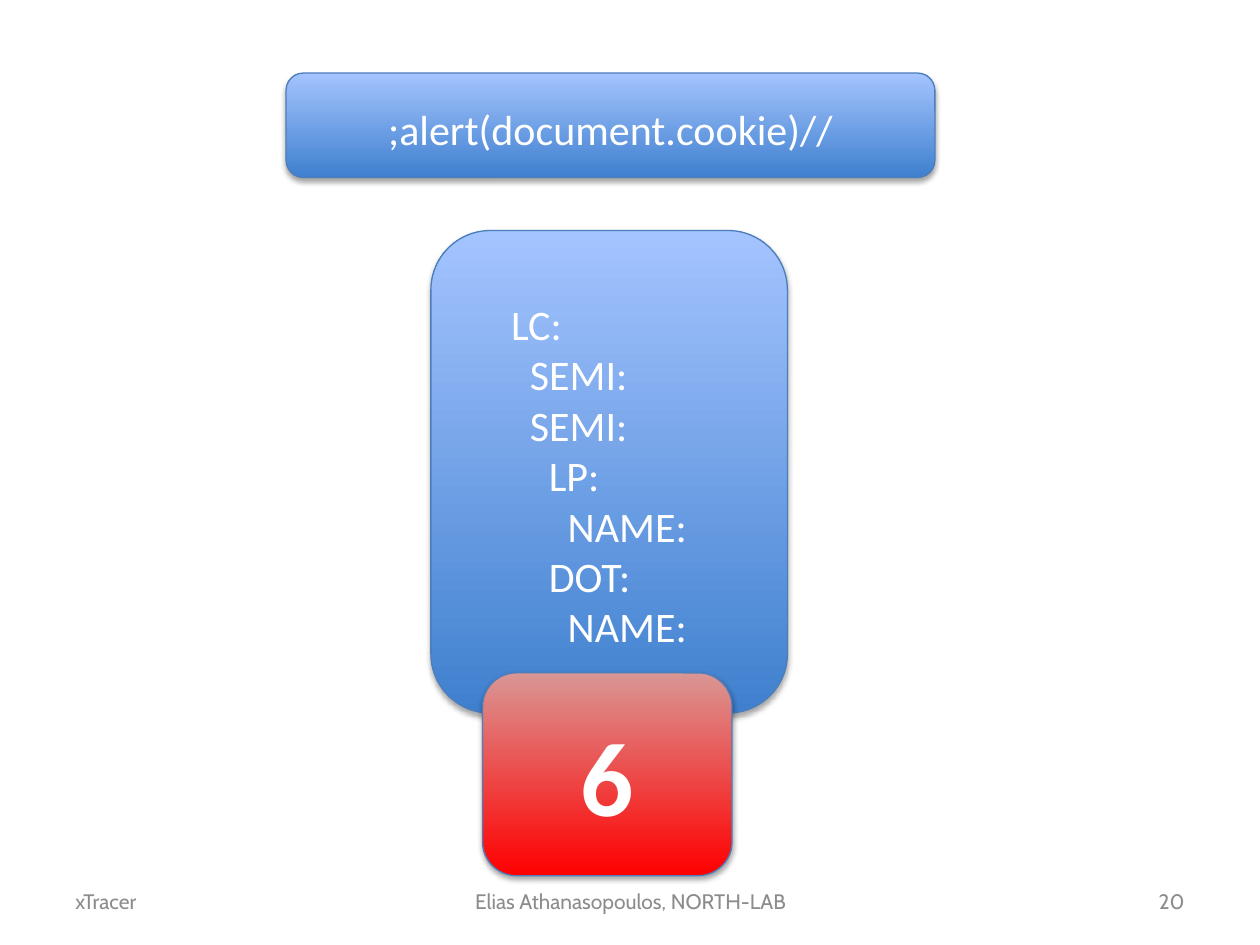
from lxml.etree import SubElement
from pptx import Presentation
from pptx.dml.color import RGBColor
from pptx.enum.shapes import MSO_SHAPE
from pptx.enum.text import MSO_ANCHOR, PP_ALIGN
from pptx.oxml.ns import qn
from pptx.util import Inches, Pt

WHITE = RGBColor(0xFF, 0xFF, 0xFF)
GRAY = RGBColor(0x8C, 0x8C, 0x8C)
OUTLINE = RGBColor(0x4B, 0x7E, 0xBC)
BLUE = RGBColor(0x3F, 0x80, 0xCE)
LIGHT_BLUE = RGBColor(0xA4, 0xC4, 0xFF)
RED = RGBColor(0xFF, 0x00, 0x00)
PINK = RGBColor(0xD9, 0x96, 0x94)

TOKENS = [("LC:", 0), ("SEMI:", 1), ("SEMI:", 1), ("LP:", 2),
          ("NAME:", 3), ("DOT:", 2), ("NAME:", 3)]


class SlideBuilder:
    body_font = "Calibri"
    footer_font = "Cabin"
    list_margin = Inches(0.4)
    level_indent = Inches(0.15)

    def __init__(self, slide):
        self.slide = slide

    def set_text(self, para, text, font, size, color, align, bold=False):
        para.text = text
        para.alignment = align
        para.font.name = font
        para.font.size = Pt(size)
        para.font.color.rgb = color
        para.font.bold = bold

    def footer(self, text, left, width, align):
        box = self.slide.shapes.add_textbox(
            Inches(left), Inches(6.95), Inches(width), Inches(0.4))
        frame = box.text_frame
        frame.word_wrap = True
        frame.vertical_anchor = MSO_ANCHOR.MIDDLE
        self.set_text(frame.paragraphs[0], text, self.footer_font, 12, GRAY, align)

    def shadow(self, shape):
        shape.shadow.inherit = False
        effects = shape._element.spPr.find(qn("a:effectLst"))
        outer = SubElement(effects, qn("a:outerShdw"), blurRad=str(Pt(3.1)),
                           dist=str(Pt(1.8)), dir="5400000", rotWithShape="0")
        color = SubElement(outer, qn("a:srgbClr"), val="000000")
        SubElement(color, qn("a:alpha"), val="35000")

    def panel(self, left, top, width, height, bottom_color, top_color):
        """Add a rounded box with a vertical gradient and return its text frame."""
        shape = self.slide.shapes.add_shape(
            MSO_SHAPE.ROUNDED_RECTANGLE,
            Inches(left), Inches(top), Inches(width), Inches(height))
        shape.fill.gradient()
        shape.fill.gradient_angle = 90
        for stop, color in zip(shape.fill.gradient_stops, (bottom_color, top_color)):
            stop.color.rgb = color
        shape.line.color.rgb = OUTLINE
        shape.line.width = Pt(0.75)
        self.shadow(shape)
        frame = shape.text_frame
        frame.word_wrap = True
        frame.vertical_anchor = MSO_ANCHOR.MIDDLE
        return frame

    def label(self, frame, text, size, bold=False):
        self.set_text(frame.paragraphs[0], text, self.body_font, size, WHITE,
                      PP_ALIGN.CENTER, bold)

    def outline(self, frame, items):
        """Fill the frame with (text, level) items as left-aligned, indented lines."""
        for index, (text, level) in enumerate(items):
            para = frame.add_paragraph() if index else frame.paragraphs[0]
            self.set_text(para, text, self.body_font, 24, WHITE, PP_ALIGN.LEFT)
            margin = self.list_margin + level * self.level_indent
            para._p.get_or_add_pPr().set("marL", str(margin))


def main():
    deck = Presentation()
    deck.slide_width, deck.slide_height = Inches(10), Inches(7.5)
    page = SlideBuilder(deck.slides.add_slide(deck.slide_layouts[6]))

    page.footer("xTracer", 0.5, 2.33, PP_ALIGN.LEFT)
    page.footer("Elias Athanasopoulos, NORTH-LAB", 3.42, 3.17, PP_ALIGN.CENTER)
    page.footer("20", 7.17, 2.33, PP_ALIGN.RIGHT)

    code = page.panel(2.27, 0.58, 5.15, 0.83, BLUE, LIGHT_BLUE)
    tree = page.panel(3.42, 1.83, 2.83, 3.83, BLUE, LIGHT_BLUE)
    for frame in (code, tree):
        frame.margin_top = Inches(0.1)
    page.label(code, ";alert(document.cookie)//", 24)
    page.outline(tree, TOKENS)

    depth = page.panel(3.83, 5.34, 1.98, 1.61, RED, PINK)
    page.label(depth, "6", 60, bold=True)

    deck.save("out.pptx")


if __name__ == "__main__":
    main()
